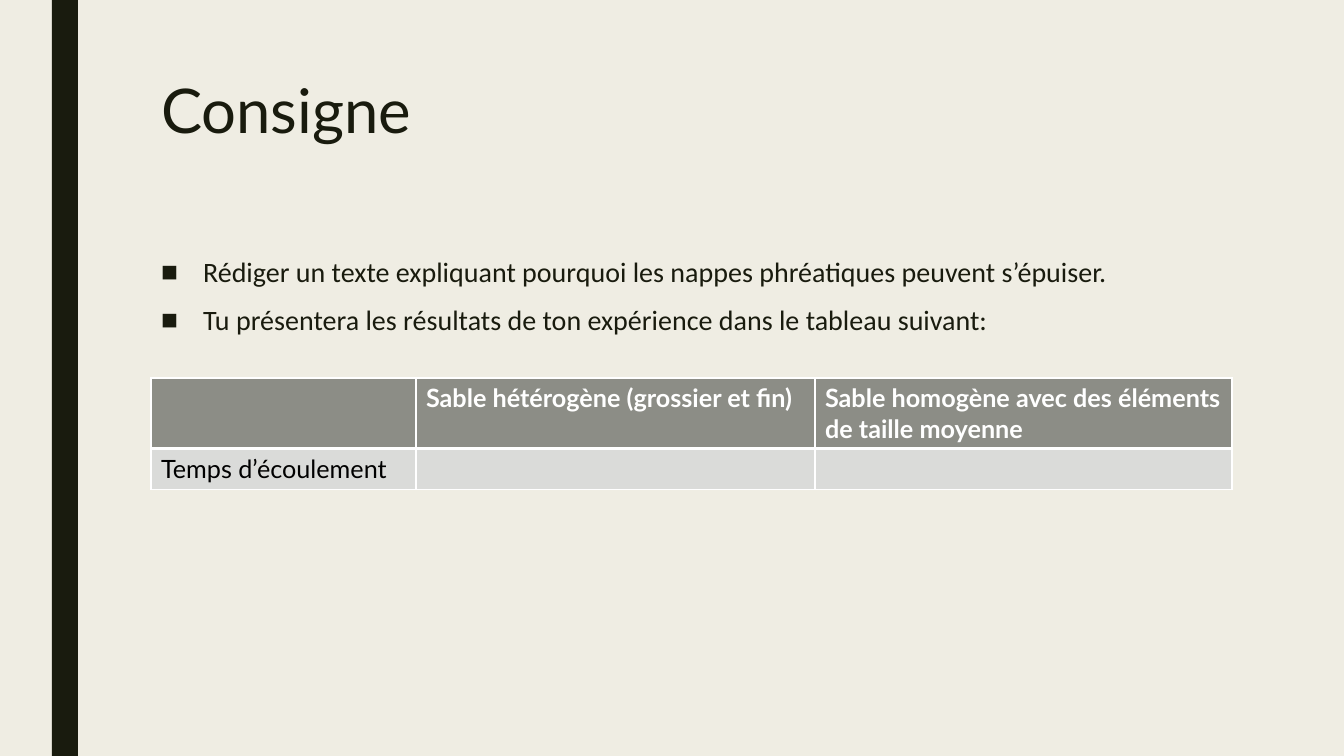
from dataclasses import dataclass

from lxml import etree
from pptx import Presentation
from pptx.dml.color import RGBColor
from pptx.enum.shapes import MSO_SHAPE
from pptx.enum.text import MSO_ANCHOR, MSO_AUTO_SIZE, PP_ALIGN
from pptx.oxml.ns import qn
from pptx.util import Pt

RECTANGLE = MSO_SHAPE.RECTANGLE
TOP = MSO_ANCHOR.TOP
NO_AUTOFIT = MSO_AUTO_SIZE.NONE
LEFT = PP_ALIGN.LEFT

TITLE = "Consigne"
INSTRUCTIONS = [
    "Rédiger un texte expliquant pourquoi les nappes phréatiques peuvent s’épuiser.",
    "Tu présentera les résultats de ton expérience dans le tableau suivant:",
]
RESULTS = [
    ["", "Sable hétérogène (grossier et fin)",
     "Sable homogène avec des éléments de taille moyenne"],
    ["Temps d’écoulement", "", ""],
]

# Lengths in px: left, top, width, height
PAGE_SIZE = (1344, 756)
STRIPE_AREA = (52, 0, 26, 756)
TITLE_AREA = (151, 76, 1058, 163)
BODY_AREA = (151, 252, 1058, 395)
TABLE_ORIGIN = (151, 378)
COLUMN_WIDTHS = [265, 399, 417]
ROW_HEIGHTS = [70, 41]
BULLET_INDENT = 42


@dataclass(frozen=True)
class Theme:
    background: str = "EFEDE3"
    ink: str = "191B0E"
    header_fill: str = "8C8D86"
    header_text: str = "FFFFFF"
    row_fill: str = "DADBD9"
    row_text: str = "000000"
    border: str = "FFFFFF"
    heading_font: str = "Lato"
    body_font: str = "Calibri"
    title_size: int = 44
    body_size: int = 20
    table_size: int = 18


THEME = Theme()


def px(length):
    """Convert px, at 100.8 to the inch, to EMU."""
    return round(length * 914400 / 100.8)


def place(shape, area):
    shape.left, shape.top, shape.width, shape.height = map(px, area)


def paint(fill, color):
    fill.solid()
    fill.fore_color.rgb = RGBColor.from_string(color)


def style_font(para, name, size, color, bold=False):
    font = para.font
    font.name, font.size, font.bold = name, Pt(size), bold
    font.color.rgb = RGBColor.from_string(color)


def prepare_frame(frame):
    frame.word_wrap = True
    frame.auto_size = NO_AUTOFIT
    frame.vertical_anchor = TOP


def add_bullet(para):
    properties = para._p.get_or_add_pPr()
    properties.set("marL", str(px(BULLET_INDENT)))
    properties.set("indent", str(-px(BULLET_INDENT)))
    etree.SubElement(properties, qn("a:buChar"), char="■")


def add_borders(cell, widths):
    """Draw cell edges; widths maps an edge letter to points."""
    properties = cell._tc.get_or_add_tcPr()
    for edge, width in widths.items():
        line = etree.SubElement(properties, qn("a:ln" + edge), w=str(Pt(width)))
        fill = etree.SubElement(line, qn("a:solidFill"))
        etree.SubElement(fill, qn("a:srgbClr"), val=THEME.border)


def add_stripe(page):
    stripe = page.shapes.add_shape(RECTANGLE, *map(px, STRIPE_AREA))
    stripe.shadow.inherit = False
    paint(stripe.fill, THEME.ink)
    stripe.line.fill.background()


def fill_title(title):
    place(title, TITLE_AREA)
    frame = title.text_frame
    prepare_frame(frame)
    frame.text = TITLE
    para = frame.paragraphs[0]
    para.alignment = LEFT
    para.line_spacing = 0.89
    style_font(para, THEME.heading_font, THEME.title_size, THEME.ink)


def fill_instructions(body):
    place(body, BODY_AREA)
    frame = body.text_frame
    prepare_frame(frame)
    frame.text = "\n".join(INSTRUCTIONS)
    for para in frame.paragraphs:
        para.line_spacing = 0.94
        para.space_before, para.space_after = Pt(10), Pt(2)
        add_bullet(para)
        style_font(para, THEME.body_font, THEME.body_size, THEME.ink)


def add_results(page):
    size = sum(COLUMN_WIDTHS), sum(ROW_HEIGHTS)
    table = page.shapes.add_table(
        len(RESULTS), len(COLUMN_WIDTHS), *map(px, TABLE_ORIGIN + size)).table
    for column, width in zip(table.columns, COLUMN_WIDTHS):
        column.width = px(width)
    for row, height, texts in zip(table.rows, ROW_HEIGHTS, RESULTS):
        row.height = px(height)
        header = texts is RESULTS[0]
        widths = {"L": 1, "R": 1, "T": 1 if header else 3, "B": 3 if header else 1}
        for cell, text in zip(row.cells, texts):
            add_borders(cell, widths)
            paint(cell.fill, THEME.header_fill if header else THEME.row_fill)
            cell.text = text
            color = THEME.header_text if header else THEME.row_text
            style_font(cell.text_frame.paragraphs[0], THEME.heading_font,
                       THEME.table_size, color, bold=header)


def main():
    deck = Presentation()
    deck.slide_width, deck.slide_height = map(px, PAGE_SIZE)
    page = deck.slides.add_slide(deck.slide_layouts[1])
    paint(page.background.fill, THEME.background)
    add_stripe(page)
    fill_title(page.shapes.title)
    fill_instructions(page.placeholders[1])
    add_results(page)
    deck.save("out.pptx")


if __name__ == "__main__":
    main()
